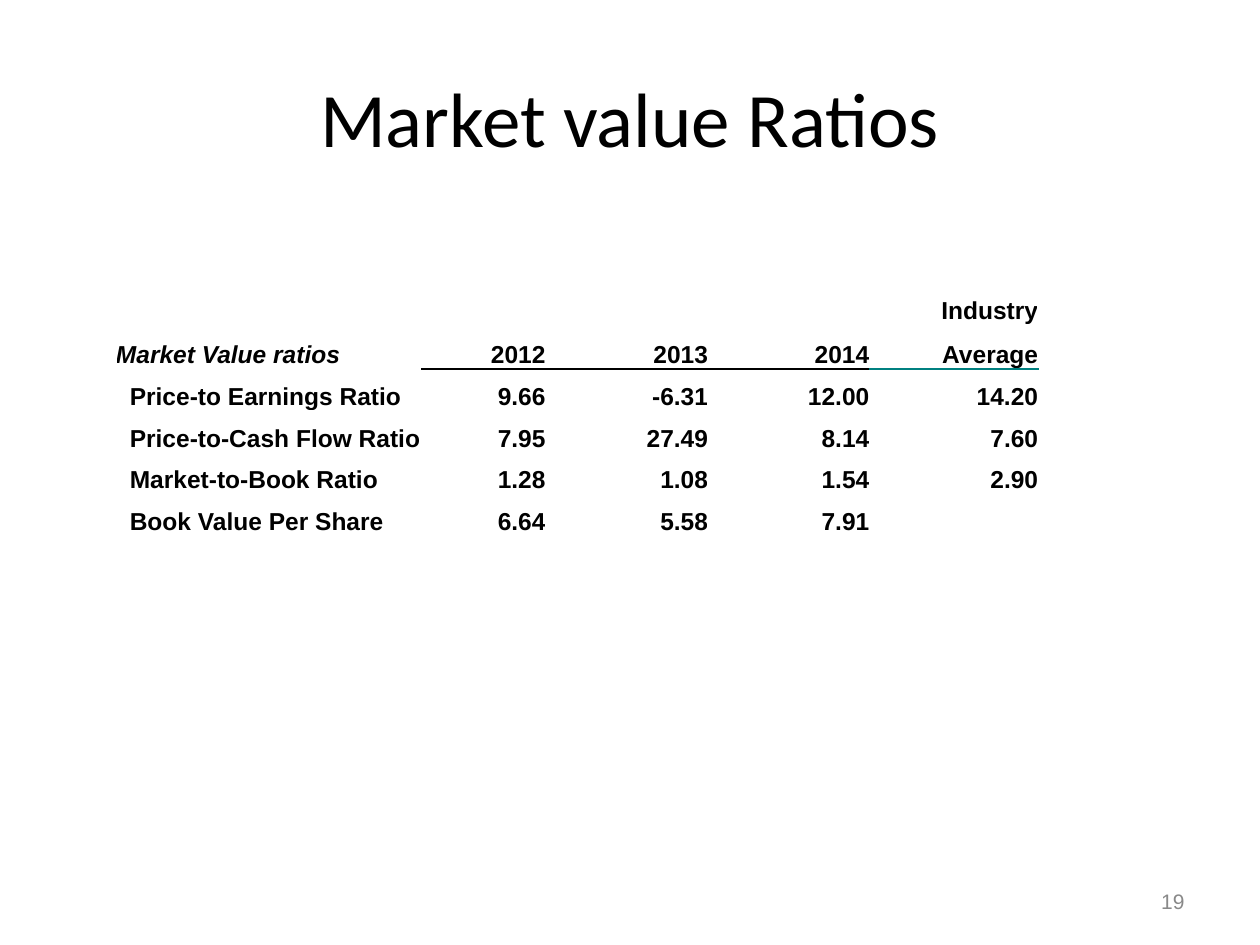
import pptx
import pptx.dml.color
import pptx.enum.text
import pptx.oxml
import pptx.oxml.ns
import pptx.util
from pptx.util import Inches

ALIGN = pptx.enum.text.PP_ALIGN
ANCHOR = pptx.enum.text.MSO_ANCHOR

TITLE = "Market value Ratios"
PAGE = "19"
ROWS = [
    ("", "", "", "", "Industry"),
    ("Market Value ratios", "2012", "2013", "2014", "Average"),
    ("Price-to Earnings Ratio", "9.66", "-6.31", "12.00", "14.20"),
    ("Price-to-Cash Flow Ratio", "7.95", "27.49", "8.14", "7.60"),
    ("Market-to-Book Ratio", "1.28", "1.08", "1.54", "2.90"),
    ("Book Value Per Share", "6.64", "5.58", "7.91", ""),
    ("", "", "", "", ""),
]
HEADER = 1
COL_WIDTHS = [1.1, 1.33, 0.98, 1.29, 1.28, 1.34]
ROW_HEIGHT, HEADER_HEIGHT = 0.33, 0.35
RULE_COLORS = ["000000", "000000", "000000", "008080"]
INDENT = 0.11


def rgb(value):
    return pptx.dml.color.RGBColor.from_string(value)


def add_run(p, text, size, font, color="000000", bold=False, italic=False):
    r = p.add_run()
    r.text = text
    r.font.size = pptx.util.Pt(size)
    r.font.name = font
    r.font.color.rgb = rgb(color)
    r.font.bold = bold
    r.font.italic = italic


def add_text(slide, box, text, size, font, color, align):
    tf = slide.shapes.add_textbox(*map(Inches, box)).text_frame
    tf.word_wrap = True
    tf.vertical_anchor = ANCHOR.MIDDLE
    p = tf.paragraphs[0]
    p.alignment = align
    add_run(p, text, size, font, color)


def add_rule(cell, side, color):
    """Draw a 1 pt border on one side (lnT or lnB) of a cell."""
    line = pptx.oxml.parse_xml(
        f'<a:{side} {pptx.oxml.ns.nsdecls("a")} w="12700"><a:solidFill>'
        f'<a:srgbClr val="{color}"/></a:solidFill></a:{side}>')
    cell._tc.get_or_add_tcPr().insert(0, line)


def add_ratio_table(slide):
    heights = [HEADER_HEIGHT if i == HEADER else ROW_HEIGHT for i in range(len(ROWS))]
    table = slide.shapes.add_table(
        len(ROWS), len(COL_WIDTHS), Inches(0.92), Inches(2.25),
        Inches(sum(COL_WIDTHS)), Inches(sum(heights))).table
    table.first_row = table.horz_banding = False
    for col, width in zip(table.columns, COL_WIDTHS):
        col.width = Inches(width)
    for row, height in zip(table.rows, heights):
        row.height = Inches(height)
    for cell in table.iter_cells():
        cell.fill.background()
        cell.margin_left = cell.margin_right = cell.margin_top = cell.margin_bottom = 0
        cell.vertical_anchor = ANCHOR.BOTTOM

    for i, (label, *values) in enumerate(ROWS):
        if i >= HEADER:
            table.cell(i, 0).merge(table.cell(i, 1))
        if i > HEADER:
            table.cell(i, 0).margin_left = Inches(INDENT)
        for j, text in enumerate([label, "", *values]):
            if text:
                p = table.cell(i, j).text_frame.paragraphs[0]
                p.alignment = ALIGN.RIGHT if j else ALIGN.LEFT
                add_run(p, text, 14, "Arial", bold=True, italic=i == HEADER and j == 0)

    for j, color in enumerate(RULE_COLORS, start=2):
        add_rule(table.cell(HEADER, j), "lnB", color)
        add_rule(table.cell(HEADER + 1, j), "lnT", color)


def main():
    prs = pptx.Presentation()
    prs.slide_width, prs.slide_height = Inches(10), Inches(7.5)
    slide = prs.slides.add_slide(prs.slide_layouts[6])
    add_text(slide, (0.5, 0.3, 9, 1.25), TITLE, 44, "Calibri", "000000", ALIGN.CENTER)
    add_ratio_table(slide)
    add_text(slide, (7.17, 6.95, 2.33, 0.4), PAGE, 12, "Arial", "898989", ALIGN.RIGHT)
    prs.save("out.pptx")


if __name__ == "__main__":
    main()
